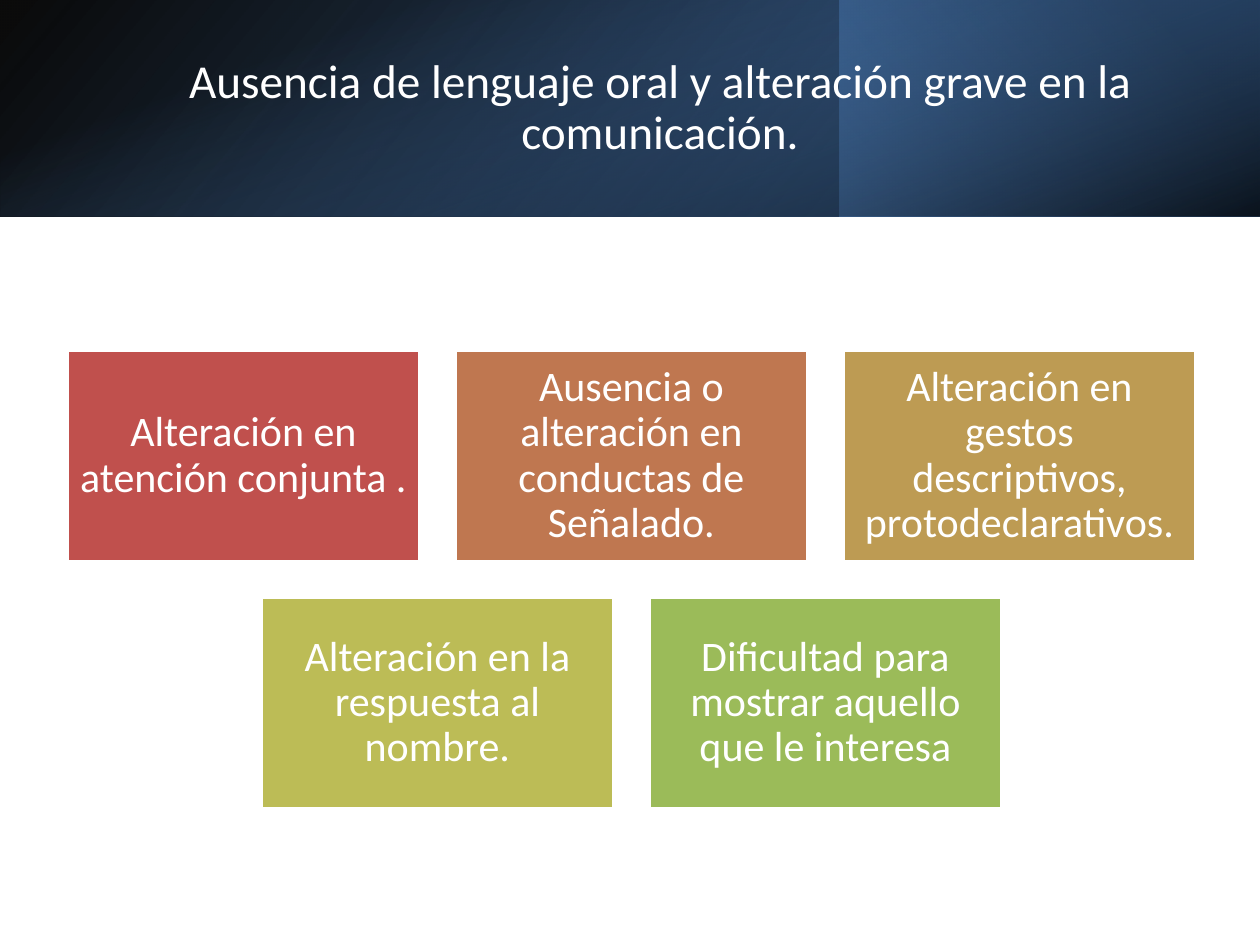
from lxml.etree import SubElement
from pptx import Presentation
from pptx.dml.color import RGBColor
from pptx.enum.shapes import MSO_SHAPE
from pptx.enum.text import MSO_ANCHOR, PP_ALIGN
from pptx.oxml.ns import qn
from pptx.util import Emu, Pt

SLIDE_W, SLIDE_H = 1260, 945
TITLE = "Ausencia de lenguaje oral y alteración grave en la comunicación."
BANDS = [
    dict(box=(0, 0, 1260, 217), angle=140, flip=True,
         stops=[(0, "000000", 96), (100, "376092", 100)]),
    dict(box=(840, 0, 420, 217), angle=320, rotation=180,
         stops=[(19, "254061", 68), (100, "4F81BD", 79)]),
    dict(box=(0, 0, 1260, 217), angle=340, rotation=90,
         stops=[(23, "4F81BD", 0), (99, "000000", 74)]),
]
TILE_ROWS = [
    [("Alteración en atención conjunta .", "C0504D"),
     ("Ausencia o alteración en conductas de Señalado.", "BF7750"),
     ("Alteración en gestos descriptivos, protodeclarativos.", "BD9B53")],
    [("Alteración en la respuesta al nombre.", "BCBC56"),
     ("Dificultad para mostrar aquello que le interesa", "9BBB59")],
]


def px(n):
    """Turn pixels into EMU."""
    return Emu(round(n * 914400 / 126))


def color(value):
    """Turn a hex string into a colour."""
    return RGBColor.from_string(value)


def set_attrs(obj, **values):
    """Set each named attribute on an object."""
    for name, value in values.items():
        setattr(obj, name, value)


def add_rect(slide, x, y, w, h):
    """Add a rectangle without a shadow."""
    sp = slide.shapes.add_shape(MSO_SHAPE.RECTANGLE, px(x), px(y), px(w), px(h))
    sp.shadow.inherit = False
    return sp


def write_text(sp, text, size, inset_x, inset_y):
    """Write one centred white paragraph into a shape."""
    tf = sp.text_frame
    set_attrs(tf, word_wrap=True, vertical_anchor=MSO_ANCHOR.MIDDLE,
              margin_left=px(inset_x), margin_right=px(inset_x),
              margin_top=px(inset_y), margin_bottom=px(inset_y))
    p = tf.paragraphs[0]
    set_attrs(p, alignment=PP_ALIGN.CENTER, line_spacing=0.9)
    r = p.add_run()
    r.text = text
    set_attrs(r.font, size=Pt(size), name="Calibri")
    r.font.color.rgb = color("FFFFFF")


def fill_gradient(sp, stops, angle):
    """Fill a shape with a linear gradient of translucent stops."""
    sp.fill.gradient()
    grad = sp._element.spPr.find(qn("a:gradFill"))
    for child in list(grad):
        grad.remove(child)
    gs_list = SubElement(grad, qn("a:gsLst"))
    for position, value, opacity in stops:
        gs = SubElement(gs_list, qn("a:gs"), pos=str(position * 1000))
        clr = SubElement(gs, qn("a:srgbClr"), val=value)
        SubElement(clr, qn("a:alpha"), val=str(opacity * 1000))
    SubElement(grad, qn("a:lin"), ang=str(angle * 60000), scaled="0")


def add_band(slide, box, stops, angle, rotation=0, flip=False):
    """Add a gradient band that covers the box once it is rotated."""
    x, y, w, h = box
    if rotation == 90:
        x, y, w, h = x + (w - h) / 2, y + (h - w) / 2, h, w
    sp = add_rect(slide, x, y, w, h)
    sp.rotation = rotation
    if flip:
        sp._element.spPr.find(qn("a:xfrm")).set("flipH", "1")
    sp.line.fill.background()
    fill_gradient(sp, stops, angle)


def add_header(slide, x, y, w, h):
    """Lay the bands and place the title above them."""
    for band in BANDS:
        add_band(slide, **band)
    title = slide.shapes.title
    set_attrs(title, left=px(x), top=px(y), width=px(w), height=px(h))
    write_text(title, TITLE, 27, 13, 6)
    slide.shapes._spTree.append(title._element)


def add_tiles(slide, x, y, w, h, gap=35):
    """Fill the box with rows of equal tiles, each row centred."""
    columns = max(len(row) for row in TILE_ROWS)
    tile_w = (w - gap * (columns - 1)) / columns
    tile_h = (h - gap * (len(TILE_ROWS) - 1)) / len(TILE_ROWS)
    for i, row in enumerate(TILE_ROWS):
        left = x + (columns - len(row)) * (tile_w + gap) / 2
        for j, (text, fill) in enumerate(row):
            sp = add_rect(slide, left + j * (tile_w + gap),
                          y + i * (tile_h + gap), tile_w, tile_h)
            sp.fill.solid()
            sp.fill.fore_color.rgb = color(fill)
            sp.line.color.rgb = color("FFFFFF")
            sp.line.width = Pt(2)
            write_text(sp, text, 24, 12, 12)


def main():
    """Build and save the slide."""
    prs = Presentation()
    set_attrs(prs, slide_width=px(SLIDE_W), slide_height=px(SLIDE_H))
    slide = prs.slides.add_slide(prs.slide_layouts[5])
    add_header(slide, 141, 48, 1038, 121)
    add_tiles(slide, 67, 350, 1129, 459)
    prs.save("out.pptx")


if __name__ == "__main__":
    main()
